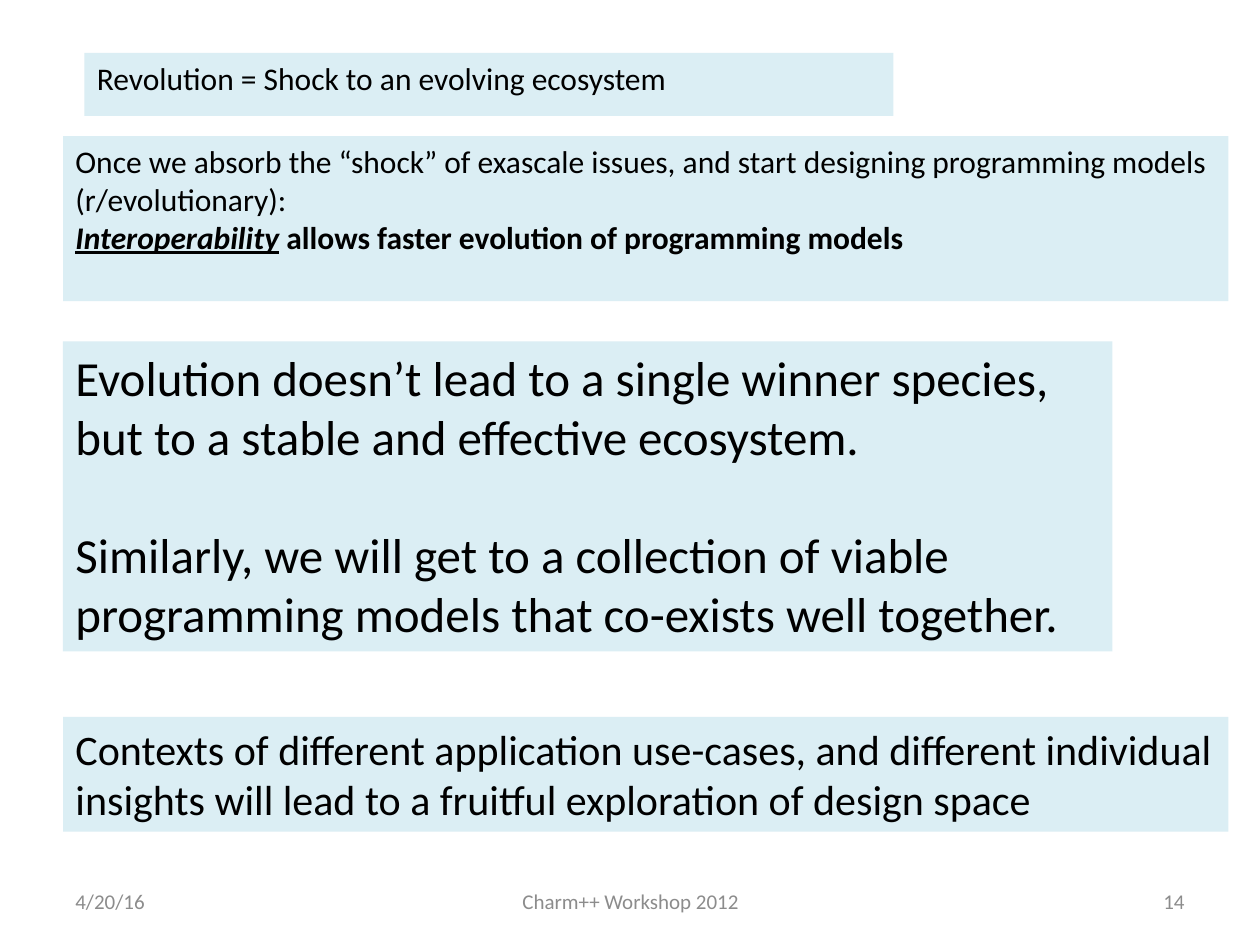
"""Build a slide on how programming models evolve into an ecosystem."""
from dataclasses import dataclass

from pptx import Presentation
from pptx.dml.color import RGBColor
from pptx.enum import shapes, text
from pptx.util import Inches, Pt


@dataclass(frozen=True)
class Theme:
    font: str = "Calibri"
    panel: str = "DBEEF4"
    ink: str = "000000"
    muted: str = "8C8C8C"
    small: int = 12
    body: int = 18
    large: int = 24
    display: int = 28
    paragraph_gap: int = 34


THEME = Theme()
LEFT, WIDE = 0.5, 9.25

PANELS = [
    dict(box=(LEFT, 1.08, WIDE, 1.31), size=THEME.body, gap=0, paragraphs=[
        dict(runs=["Once we absorb the “shock” of exascale issues, and start "
                   "designing programming models (r/evolutionary):"]),
        dict(bold=True, runs=["Interoperability",
                              " allows faster evolution of programming models"]),
    ]),
    dict(box=(LEFT, 2.71, 8.33, 2.46), size=THEME.display, gap=THEME.paragraph_gap, paragraphs=[
        dict(runs=["Evolution doesn’t lead to a single winner species, "
                   "but to a stable and effective ecosystem."]),
        dict(runs=["Similarly, we will get to a collection of viable "
                   "programming models that co-exists well together."]),
    ]),
    dict(box=(LEFT, 5.69, WIDE, 0.91), size=THEME.large, gap=0, paragraphs=[
        dict(runs=["Contexts of different application use-cases, and different "
                   "individual insights will lead to a fruitful exploration of design space"]),
    ]),
    dict(box=(0.67, 0.42, 6.42, 0.5), size=THEME.body, gap=0, paragraphs=[
        dict(runs=["Revolution = Shock to an evolving ecosystem"]),
    ]),
]
EMPHASIZED = {"Interoperability"}

FOOTER_TOP, FOOTER_HEIGHT = 6.95, 0.4
FOOTERS = [
    ("4/20/16", LEFT, 2.33, text.PP_ALIGN.LEFT),
    ("Charm++ Workshop 2012", 3.42, 3.17, text.PP_ALIGN.CENTER),
    ("14", 7.17, 2.33, text.PP_ALIGN.RIGHT),
]


def style(paragraph, size, color, alignment=text.PP_ALIGN.LEFT):
    paragraph.alignment = alignment
    paragraph.font.name = THEME.font
    paragraph.font.size = Pt(size)
    paragraph.font.color.rgb = RGBColor.from_string(color)


def add_footer(slide, words, left, width, alignment):
    box = slide.shapes.add_textbox(*map(Inches, (left, FOOTER_TOP, width, FOOTER_HEIGHT)))
    frame = box.text_frame
    frame.word_wrap = True
    frame.vertical_anchor = text.MSO_ANCHOR.MIDDLE
    frame.text = words
    style(frame.paragraphs[0], THEME.small, THEME.muted, alignment)


def add_panel(slide, box, size, gap, paragraphs):
    shape = slide.shapes.add_shape(shapes.MSO_SHAPE.RECTANGLE, *map(Inches, box))
    shape.shadow.inherit = False
    shape.fill.solid()
    shape.fill.fore_color.rgb = RGBColor.from_string(THEME.panel)
    shape.line.fill.background()
    frame = shape.text_frame
    frame.word_wrap = True
    frame.vertical_anchor = text.MSO_ANCHOR.TOP
    for index, content in enumerate(paragraphs):
        paragraph = frame.add_paragraph() if index else frame.paragraphs[0]
        style(paragraph, size, THEME.ink)
        paragraph.font.bold = content.get("bold", False)
        paragraph.space_before = Pt(gap if index else 0)
        for words in content["runs"]:
            run = paragraph.add_run()
            run.text = words
            if words in EMPHASIZED:
                run.font.italic = run.font.underline = True


def main():
    presentation = Presentation()
    presentation.slide_width, presentation.slide_height = Inches(10), Inches(7.5)
    slide = presentation.slides.add_slide(presentation.slide_layouts[6])
    for footer in FOOTERS:
        add_footer(slide, *footer)
    for panel in PANELS:
        add_panel(slide, **panel)
    presentation.save("out.pptx")


if __name__ == "__main__":
    main()
